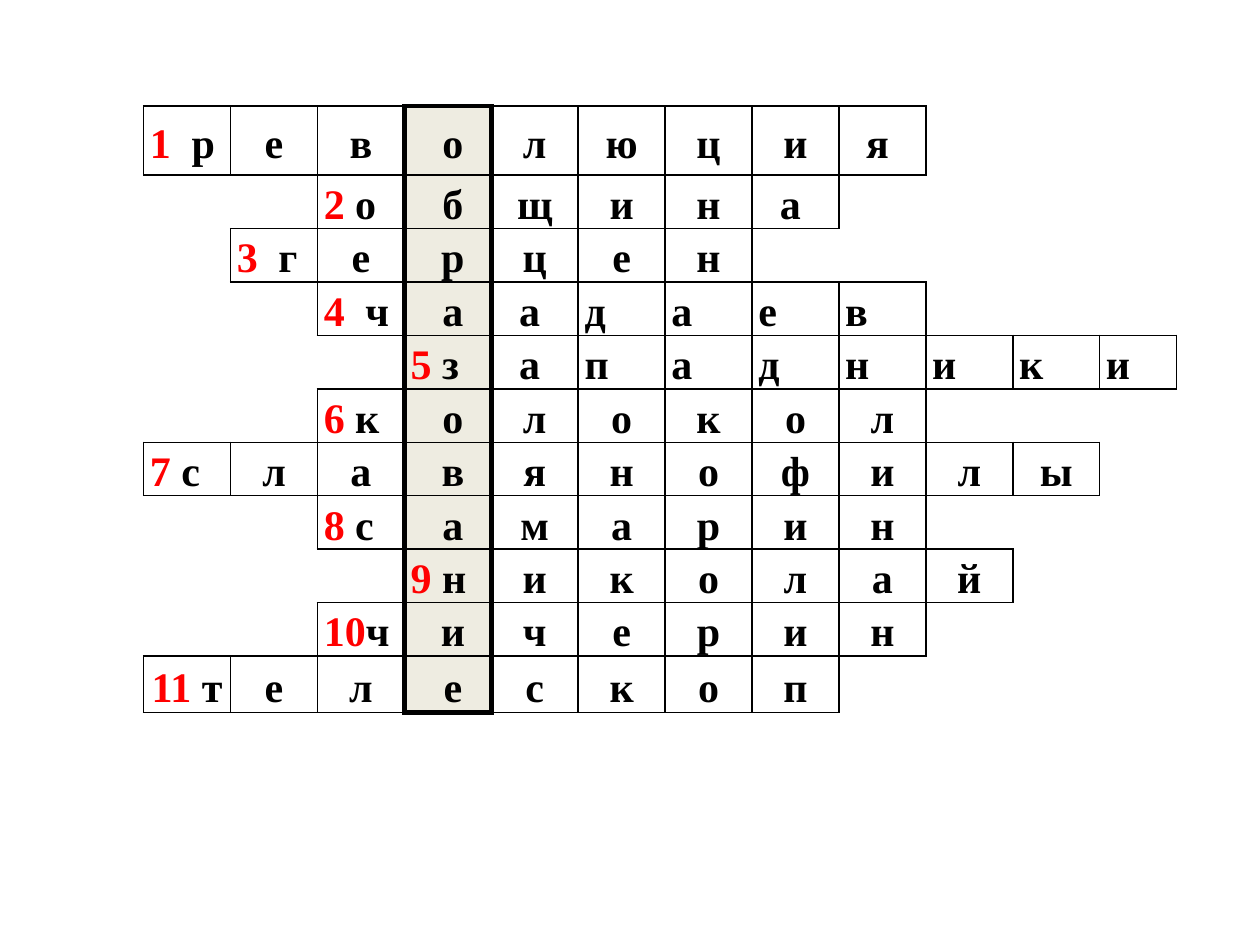
import pptx
import pptx.util
import pptx.dml.color
import pptx.enum.text
import pptx.oxml.ns
import lxml.etree

Inches = pptx.util.Inches
ALIGN = pptx.enum.text.PP_ALIGN
COLORS = {"ink": "000000", "clue": "FF0000", "key": "EEECE1"}

# First column, word, and the gap between the clue number and first letter
WORDS = [
    (0, "революция", "\t"),
    (2, "община", " "),
    (1, "герцен", "\t"),
    (2, "чаадаев", "\t"),
    (3, "западники", " "),
    (2, "колокол", " "),
    (0, "славянофилы", " "),
    (2, "самарин", " "),
    (3, "николай", " "),
    (2, "чичерин", ""),
    (0, "телескоп", " "),
]
COLS = 12
KEY = 3
LEFT_ROWS = (3, 4)
LEFT_FROM = 5
NUDGED = {(0, 8), (1, 7), (3, 4), (4, 4)}
PAD, NUDGE = 0.05, 0.08


def used(row, col):
    """Tell whether a square holds a letter."""
    if not 0 <= row < len(WORDS):
        return False
    start, word, _ = WORDS[row]
    return start <= col < start + len(word)


def edges(row, col):
    """Give the line width in points for each side of a square, 0 for none."""
    near = {"L": (row, col - 1), "R": (row, col + 1),
            "T": (row - 1, col), "B": (row + 1, col)}
    widths = {}
    for side, (r, c) in near.items():
        if side in "LR":
            thick = KEY in (col, c)
        else:
            thick = col == KEY and (min(row, r) < 0 or max(row, r) == len(WORDS))
        drawn = used(row, col) or used(r, c)
        widths[side] = (3 if thick else 1) if drawn else 0
    return widths


class Deck:
    font = "Times New Roman"
    size = 24
    spacing = 1.15

    def __init__(self):
        self.show = pptx.Presentation()
        self.show.slide_width = Inches(10)
        self.show.slide_height = Inches(7.5)
        self.slide = self.show.slides.add_slide(self.show.slide_layouts[6])

    def color(self, name):
        return pptx.dml.color.RGBColor.from_string(COLORS[name])

    def tag(self, parent, name, **attrs):
        return lxml.etree.SubElement(parent, pptx.oxml.ns.qn(name), attrs)

    def grid(self, left, top, widths, heights):
        frame = self.slide.shapes.add_table(
            len(heights), len(widths), Inches(left), Inches(top),
            Inches(sum(widths)), Inches(sum(heights)))
        table = frame.table
        table.first_row = table.horz_banding = False
        for col, width in zip(table.columns, widths):
            col.width = Inches(width)
        for row, height in zip(table.rows, heights):
            row.height = Inches(height)
        return table

    def square(self, cell, widths, fill=None):
        cell.margin_left = cell.margin_right = Inches(PAD)
        cell.margin_top = cell.margin_bottom = 0
        cell.vertical_anchor = pptx.enum.text.MSO_ANCHOR.MIDDLE
        props = cell._tc.get_or_add_tcPr()
        for side, width in widths.items():
            line = self.tag(props, "a:ln" + side, w=str(pptx.util.Pt(width)))
            if width:
                paint = self.tag(line, "a:solidFill")
                self.tag(paint, "a:srgbClr", val=COLORS["ink"])
            else:
                self.tag(line, "a:noFill")
        if fill:
            cell.fill.solid()
            cell.fill.fore_color.rgb = self.color(fill)
        else:
            cell.fill.background()

    def letter(self, cell, text, align, clue="", gap=""):
        para = cell.text_frame.paragraphs[0]
        if gap == "\t":
            tabs = self.tag(para._p.get_or_add_pPr(), "a:tabLst")
            self.tag(tabs, "a:tab", pos=str(Inches(0.33)), algn="l")
        para.alignment = align
        para.line_spacing = self.spacing
        para.font.name = self.font
        para.font.size = pptx.util.Pt(self.size)
        para.font.bold = True
        for part, name in ((clue, "clue"), (gap + text, "ink")):
            if part:
                run = para.add_run()
                run.text = part
                run.font.color.rgb = self.color(name)


def main():
    deck = Deck()
    table = deck.grid(1.14, 0.84, [0.69] * (COLS - 1) + [0.61],
                      [0.55] + [0.4] * (len(WORDS) - 2) + [0.45])
    for row, (start, word, gap) in enumerate(WORDS):
        for col in range(COLS):
            cell = table.cell(row, col)
            deck.square(cell, edges(row, col), "key" if col == KEY else None)
            if not used(row, col):
                continue
            text = word[col - start]
            if col == start:
                last = row == len(WORDS) - 1
                align = ALIGN.CENTER if last else ALIGN.LEFT
                deck.letter(cell, text, align, str(row + 1), gap)
                continue
            if col == KEY:
                cell.margin_left = Inches(PAD + NUDGE)
            if (row, col) in NUDGED:
                cell.margin_right = Inches(PAD + NUDGE)
            flush = row in LEFT_ROWS and col >= LEFT_FROM
            deck.letter(cell, text, ALIGN.LEFT if flush else ALIGN.CENTER)
    deck.show.save("out.pptx")


if __name__ == "__main__":
    main()
